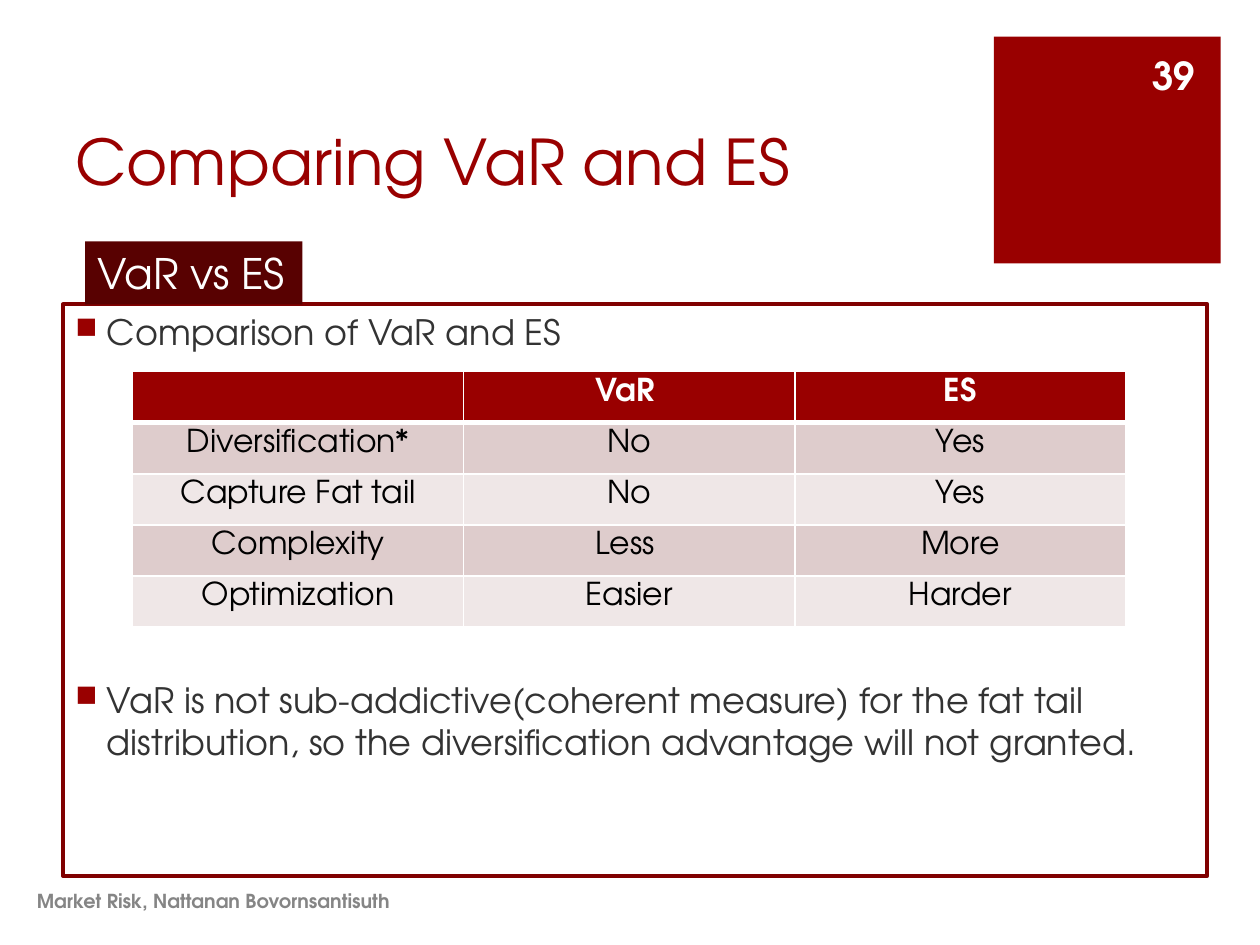
from dataclasses import dataclass

from lxml.etree import SubElement
from pptx import Presentation
from pptx.dml.color import RGBColor as Rgb
from pptx.enum.shapes import MSO_SHAPE as Preset
from pptx.enum.text import MSO_ANCHOR as Anchor, PP_ALIGN as Align
from pptx.oxml import parse_xml
from pptx.oxml.ns import nsdecls, qn
from pptx.util import Pt


@dataclass(frozen=True)
class Theme:
    font: str = "TeX Gyre Adventor"
    accent: str = "990000"
    frame: str = "800000"
    tab: str = "580101"
    body: str = "333333"
    footer: str = "858585"
    white: str = "FFFFFF"
    black: str = "000000"
    bands: tuple = ("DECCCC", "EFE7E7")
    title_size: int = 36
    tab_size: int = 24
    number_size: int = 22
    body_size: int = 20
    table_size: int = 18
    footer_size: int = 11


class PageBuilder:
    def __init__(self, page, theme):
        self.page = page
        self.theme = theme

    def style(self, para, size, color, bold=False, align=Align.LEFT):
        font = para.font
        font.name, font.size, font.bold = self.theme.font, Pt(size), bold
        font.color.rgb = Rgb.from_string(color)
        para.alignment = align

    def rectangle(self, bounds, fill=None, line=None):
        box = self.page.shapes.add_shape(Preset.RECTANGLE, *map(Pt, bounds))
        box.shadow.inherit = False
        if fill:
            box.fill.solid()
            box.fill.fore_color.rgb = Rgb.from_string(fill)
        else:
            box.fill.background()
        if line:
            box.line.color.rgb = Rgb.from_string(line)
            box.line.width = Pt(2.25)
        else:
            box.line.fill.background()
        return box

    def text(self, bounds, words, size, color, anchor=Anchor.MIDDLE, **look):
        box = self.page.shapes.add_textbox(*map(Pt, bounds))
        frame = box.text_frame
        frame.word_wrap = True
        frame.vertical_anchor = anchor
        frame.text = words
        self.style(frame.paragraphs[0], size, color, **look)

    def tab(self, bounds, words):
        """Filled label sitting on the top edge of the framed body."""
        frame = self.rectangle(bounds, fill=self.theme.tab).text_frame
        frame.word_wrap = False
        frame.vertical_anchor = Anchor.TOP
        frame.text = words
        self.style(frame.paragraphs[0], self.theme.tab_size, self.theme.white)

    def bullet_frame(self, bounds, bullets):
        """Outlined body; bullets are (space before, words) pairs."""
        frame = self.rectangle(bounds, line=self.theme.frame).text_frame
        frame.word_wrap = True
        frame.vertical_anchor = Anchor.TOP
        for index, (gap, words) in enumerate(bullets):
            para = frame.add_paragraph() if index else frame.paragraphs[0]
            para.text = words
            para.space_before = Pt(gap)
            props = para._p.get_or_add_pPr()
            props.set("marL", str(Pt(18)))
            props.set("indent", str(-Pt(18)))
            color = SubElement(props, qn("a:buClr"))
            SubElement(color, qn("a:srgbClr"), val=self.theme.accent)
            SubElement(props, qn("a:buSzPct"), val="85000")
            SubElement(props, qn("a:buChar"), char="■")
            self.style(para, self.theme.body_size, self.theme.body)

    def border(self, cell, **widths):
        props = cell._tc.get_or_add_tcPr()
        for index, side in enumerate("LRTB"):
            props.insert(index, parse_xml(
                f'<a:ln{side} {nsdecls("a")} w="{Pt(widths.get(side, 1))}">'
                f'<a:solidFill><a:srgbClr val="{self.theme.white}"/></a:solidFill>'
                f'</a:ln{side}>'))

    def table(self, bounds, rows):
        theme = self.theme
        grid = self.page.shapes.add_table(
            len(rows), len(rows[0]), *map(Pt, bounds)).table
        for r, row in enumerate(rows):
            header = r == 0
            fill = theme.accent if header else theme.bands[(r - 1) % 2]
            color = theme.white if header else theme.black
            for c, words in enumerate(row):
                cell = grid.cell(r, c)
                cell.vertical_anchor = Anchor.TOP
                cell.margin_top, cell.margin_bottom = Pt(3.6), Pt(0)
                cell.fill.solid()
                cell.fill.fore_color.rgb = Rgb.from_string(fill)
                self.border(cell, **({"B": 3} if header else {"T": 3} if r == 1 else {}))
                cell.text = words
                self.style(cell.text_frame.paragraphs[0], theme.table_size,
                           color, bold=header, align=Align.CENTER)


def main():
    deck = Presentation()
    deck.slide_width, deck.slide_height = Pt(720), Pt(540)
    theme = Theme()
    builder = PageBuilder(deck.slides.add_slide(deck.slide_layouts[6]), theme)

    builder.rectangle((568, 21, 129.6, 129.6), fill=theme.accent)
    builder.text((36, 27, 512.6, 90), "Comparing VaR and ES",
                 theme.title_size, theme.accent, anchor=Anchor.BOTTOM)
    builder.bullet_frame((36, 174, 654, 326.5), [
        (0, "Comparison of VaR and ES"),
        (186, "VaR is not sub-addictive(coherent measure) for the fat tail "
              "distribution, so the diversification advantage will not granted."),
    ])
    builder.text((14, 500.4, 473, 28.8), "Market Risk, Nattanan Bovornsantisuth",
                 theme.footer_size, theme.footer, bold=True)
    builder.text((650, 28.4, 40, 28.8), "39", theme.number_size, theme.white,
                 bold=True, align=Align.RIGHT)
    builder.tab((48.6, 138, 124.2, 36), "VaR vs ES")
    builder.table((75.8, 212.4, 567.6, 146), [
        ("", "VaR ", "ES"),
        ("Diversification*", "No", "Yes"),
        ("Capture Fat tail", "No", "Yes"),
        ("Complexity", "Less ", "More"),
        ("Optimization", "Easier", "Harder"),
    ])
    deck.save("out.pptx")


if __name__ == "__main__":
    main()
